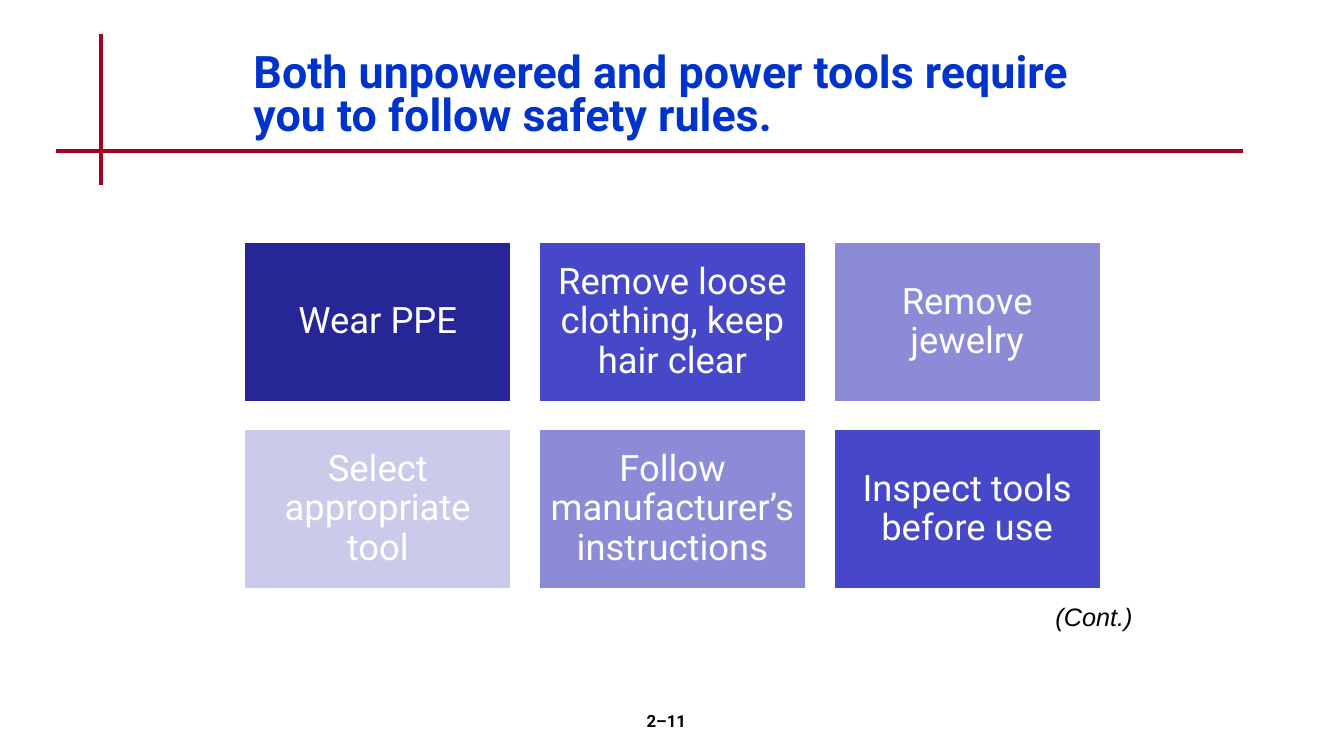
from lxml import etree
from pptx import Presentation
from pptx.dml.color import RGBColor
from pptx.enum import shapes, text
from pptx.oxml.ns import qn
from pptx.util import Pt

COLOURS = {
    "rule": "A50021",
    "title": "0033CC",
    "black": "000000",
    "white": "FFFFFF",
    "navy": "262697",
    "blue": "4747C9",
    "lavender": "8B8BD7",
    "pale": "CACAEA",
}

SAFETY_RULES = [
    ("Wear PPE", "navy"),
    ("Remove loose clothing, keep hair clear", "blue"),
    ("Remove jewelry", "lavender"),
    ("Select appropriate tool", "pale"),
    ("Follow manufacturer’s instructions", "lavender"),
    ("Inspect tools before use", "blue"),
]
COLUMNS = 3
GRID_LEFT, GRID_TOP = 174.2, 172.8
TILE_WIDTH, TILE_HEIGHT = 191.5, 114.5
GAP = 19


def colour(name):
    return RGBColor.from_string(COLOURS[name])


def write_text(shape, words, size, colour_name, align, font="Roboto",
               bold=False, italic=False, line_spacing=1.0):
    frame = shape.text_frame
    frame.word_wrap = True
    frame.text = words
    paragraph = frame.paragraphs[0]
    paragraph.alignment = align
    paragraph.line_spacing = line_spacing
    run_font = paragraph.runs[0].font
    run_font.name = font
    run_font.size = Pt(size)
    run_font.bold = bold
    run_font.italic = italic
    run_font.color.rgb = colour(colour_name)


def add_rule(slide, x1, y1, x2, y2):
    line = slide.shapes.add_connector(
        shapes.MSO_CONNECTOR.STRAIGHT, Pt(x1), Pt(y1), Pt(x2), Pt(y2))
    line.line.color.rgb = colour("rule")
    line.line.width = Pt(3)
    etree.SubElement(line._element.spPr, qn("a:effectLst"))


def add_label(slide, left, top, width, height, words, size, colour_name, align,
              anchor=text.MSO_ANCHOR.TOP, **style):
    box = slide.shapes.add_textbox(Pt(left), Pt(top), Pt(width), Pt(height))
    box.text_frame.vertical_anchor = anchor
    write_text(box, words, size, colour_name, align, **style)


def add_tile(slide, left, top, words, fill_name):
    tile = slide.shapes.add_shape(
        shapes.MSO_SHAPE.RECTANGLE, Pt(left), Pt(top), Pt(TILE_WIDTH), Pt(TILE_HEIGHT))
    tile.shadow.inherit = False
    tile.fill.solid()
    tile.fill.fore_color.rgb = colour(fill_name)
    tile.line.color.rgb = colour("white")
    tile.line.width = Pt(2)
    frame = tile.text_frame
    frame.margin_left = frame.margin_right = Pt(7.8)
    frame.margin_top = frame.margin_bottom = Pt(7.8)
    frame.vertical_anchor = text.MSO_ANCHOR.MIDDLE
    write_text(tile, words, 26, "white", text.PP_ALIGN.CENTER, line_spacing=0.9)


def main():
    presentation = Presentation()
    presentation.slide_width = Pt(960)
    presentation.slide_height = Pt(540)
    slide = presentation.slides.add_slide(presentation.slide_layouts[6])

    add_rule(slide, 72, 24, 72, 132)
    add_rule(slide, 40, 108, 888, 108)
    add_label(slide, 174, 24, 654, 90,
              "Both unpowered and power tools require you to follow safety rules.",
              32, "title", text.PP_ALIGN.LEFT, anchor=text.MSO_ANCHOR.MIDDLE,
              bold=True, line_spacing=0.8)

    for index, (words, fill_name) in enumerate(SAFETY_RULES):
        row, column = divmod(index, COLUMNS)
        add_tile(slide, GRID_LEFT + column * (TILE_WIDTH + GAP),
                 GRID_TOP + row * (TILE_HEIGHT + GAP), words, fill_name)

    add_label(slide, 696, 426, 120, 29, "(Cont.)", 18, "black",
              text.PP_ALIGN.RIGHT, font="Arial", italic=True)
    add_label(slide, 376, 504, 200, 36, "2–11", 12, "black",
              text.PP_ALIGN.CENTER, bold=True)

    presentation.save("out.pptx")


if __name__ == "__main__":
    main()
